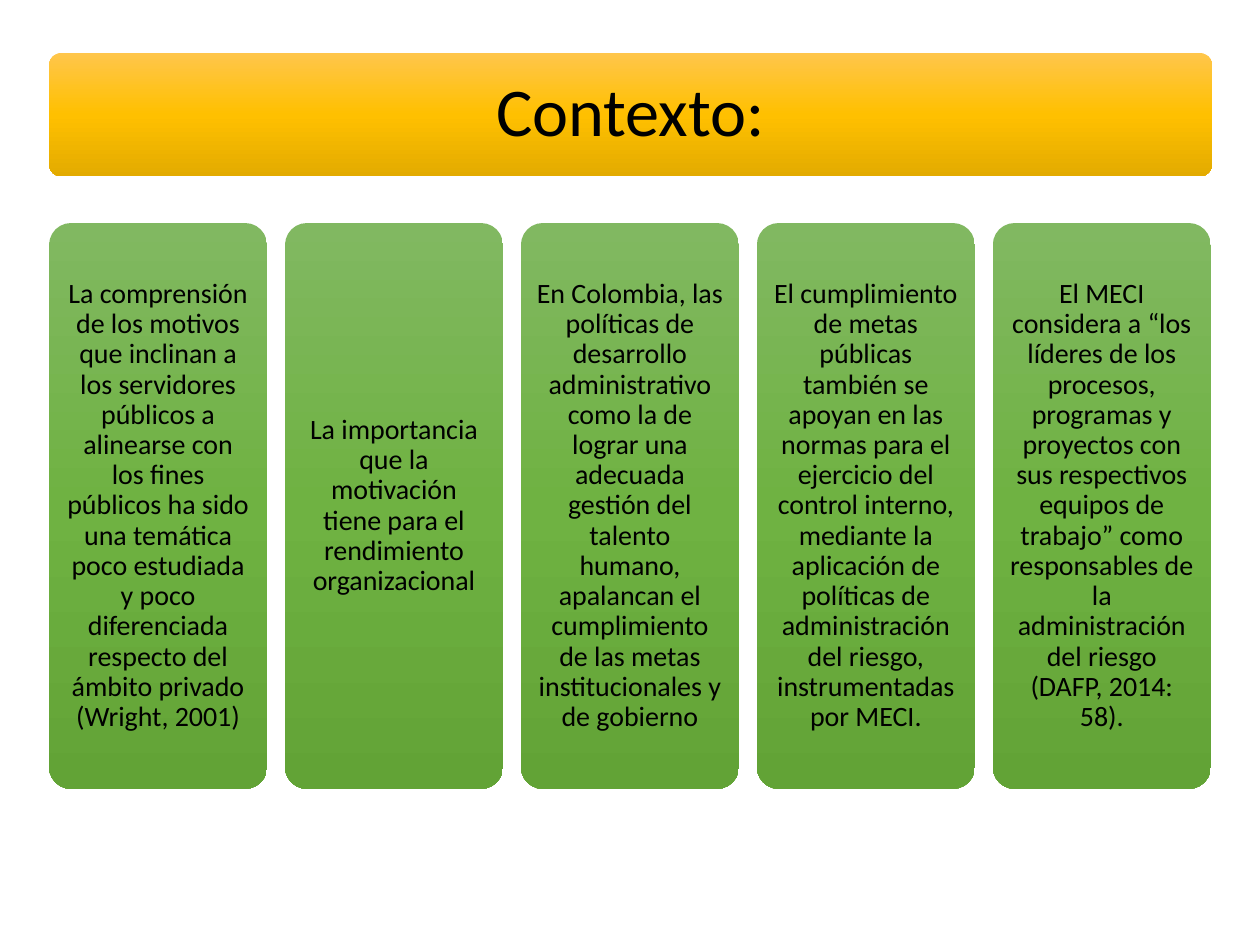
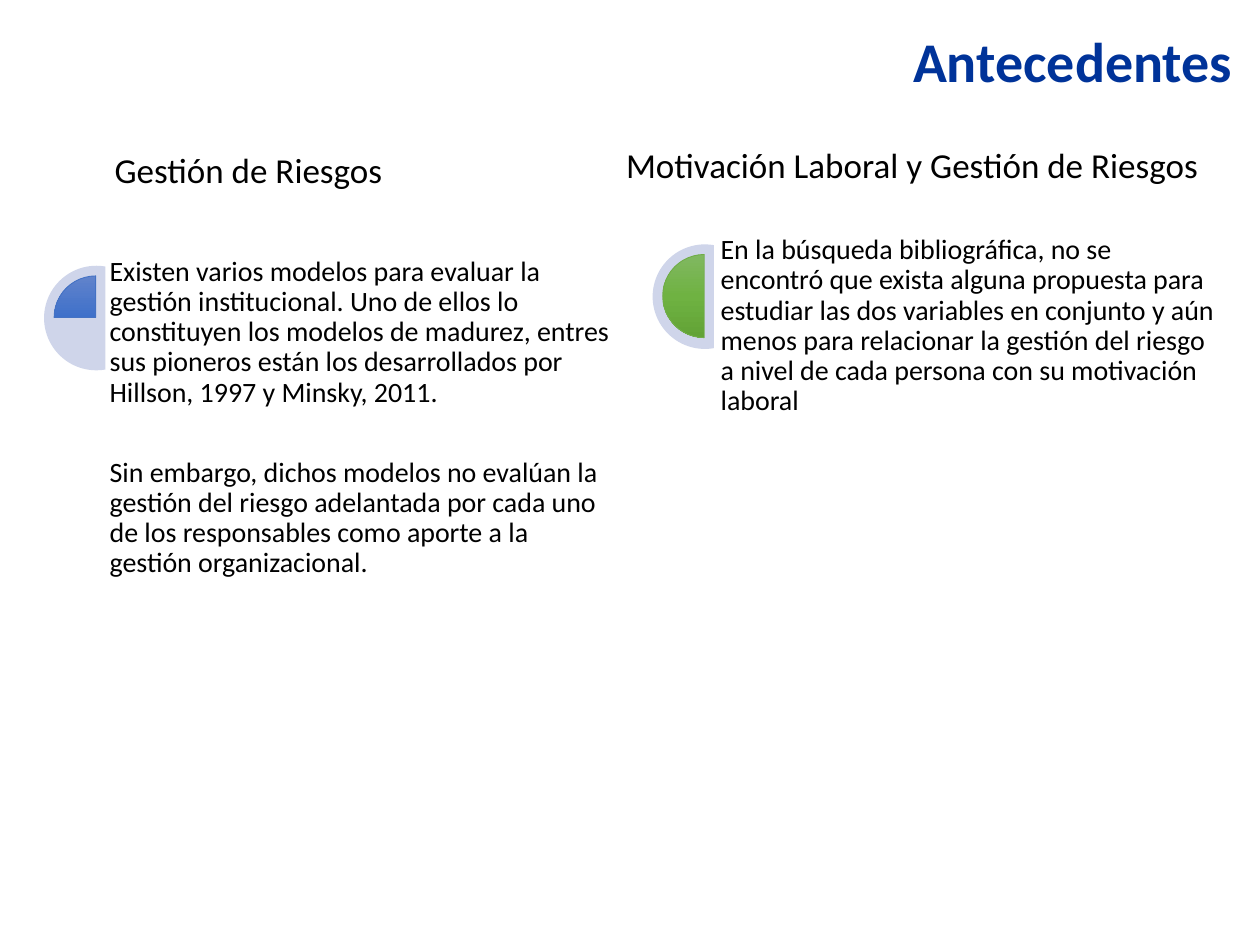
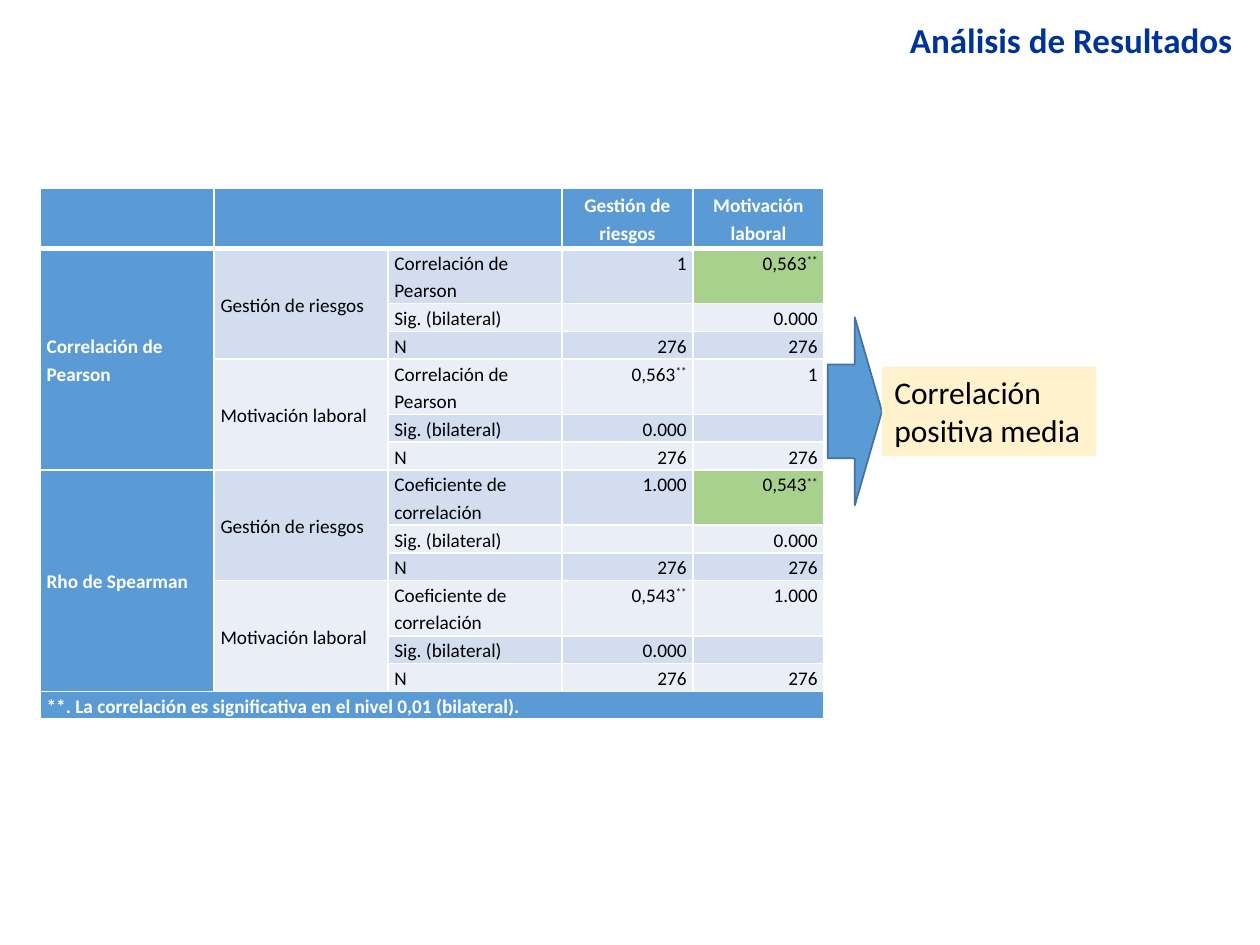
from copy import deepcopy
from lxml import etree
from pptx import Presentation, util as u
from pptx.dml.color import RGBColor
from pptx.enum import shapes, text
from pptx.oxml.ns import qn

FONT = "Calibri"
BLACK, WHITE, NAVY = "000000", "FFFFFF", "003399"
BLUE, PALE, LIGHT, MARK = "5B9BD5", "D2DEEF", "EAEFF7", "A9D18E"
GOLD = ("FFC64B", "FFC000", "E3AB00")
GREEN = ("81B861", "6FB242", "62A336")
ROYAL = ("6183CB", "3E70CA", "3062BB")
KIND = shapes.MSO_SHAPE
LEFT, MID, RIGHT = text.PP_ALIGN.LEFT, text.PP_ALIGN.CENTER, text.PP_ALIGN.RIGHT
TOP, HALF, LOW = text.MSO_ANCHOR.TOP, text.MSO_ANCHOR.MIDDLE, text.MSO_ANCHOR.BOTTOM

CARDS = [
    "La comprensión de los motivos que inclinan a los servidores públicos a alinearse con los fines públicos ha sido una temática poco estudiada y poco diferenciada respecto del ámbito privado (Wright, 2001)",
    "La importancia que la motivación tiene para el rendimiento organizacional",
    "En Colombia, las políticas de desarrollo administrativo como la de lograr una adecuada gestión del talento humano, apalancan el cumplimiento de las metas institucionales y de gobierno",
    "El cumplimiento de metas públicas también se apoyan en las normas para el ejercicio del control interno, mediante la aplicación de políticas de administración del riesgo, instrumentadas por MECI.",
    "El MECI considera a “los líderes de los procesos, programas y proyectos con sus respectivos equipos de trabajo” como responsables de la administración del riesgo (DAFP, 2014: 58).",
]

THEMES = [
    dict(head="Gestión de Riesgos", spot=(0.91, 1.02, 4.04, 0.5), align=LEFT,
         body=["Existen varios modelos para evaluar la gestión institucional. Uno de ellos lo constituyen los modelos de madurez, entres sus pioneros están los desarrollados por Hillson, 1997 y Minsky, 2011.",
               "Sin embargo, dichos modelos no evalúan la gestión del riesgo adelantada por cada uno de los responsables como aporte a la gestión organizacional."],
         area=(0.87, 2.04, 3.98, 4.05), dial=(0.35, 2.11), start=108, fill=ROYAL, edge="4472C4"),
    dict(head="Motivación Laboral y Gestión de Riesgos", spot=(4.96, 0.98, 4.55, 0.5), align=RIGHT,
         body=["En la búsqueda bibliográfica, no se encontró que exista alguna propuesta para estudiar las dos variables en conjunto y aún menos para relacionar la gestión del riesgo a nivel de cada persona con su motivación laboral"],
         area=(5.72, 1.87, 3.93, 3.89), dial=(5.18, 1.94), start=54, fill=GREEN, edge="70AD47"),
]

FACTORS = ["Gestión de riesgos", "Motivación laboral"]
TESTS = [
    ("Correlación de Pearson", "Correlación de Pearson", "1", "0,563**"),
    ("Rho de Spearman", "Coeficiente de correlación", "1.000", "0,543**"),
]
NOTE = "**. La correlación es significativa en el nivel 0,01 (bilateral)."


def tint(code):
    return RGBColor.from_string(code)


def apply(item, **vals):
    for key, val in vals.items():
        setattr(item, key, val)


def paint(part, fill):
    if isinstance(fill, str):
        part.fill.solid()
        part.fill.fore_color.rgb = tint(fill)
        return
    part.fill.gradient()
    part.fill.gradient_angle = 270
    stops = part._element.spPr.find(qn("a:gradFill")).find(qn("a:gsLst"))
    stops.insert(1, deepcopy(stops[0]))
    for stop, code, pos in zip(part.fill.gradient_stops, fill, (0, 0.5, 1)):
        stop.color.rgb = tint(code)
        stop.position = pos


def shape(slide, kind, at, fill, edge=None, width=1, adj=()):
    part = slide.shapes.add_shape(kind, *map(u.Inches, at))
    part.shadow.inherit = False
    for i, val in enumerate(adj):
        part.adjustments[i] = val
    paint(part, fill)
    if edge:
        part.line.color.rgb = tint(edge)
        part.line.width = u.Pt(width)
    else:
        part.line.fill.background()
    return part


def style(run, size, color, bold=False):
    apply(run.font, name=FONT, size=u.Pt(size), bold=bold)
    run.font.color.rgb = tint(color)


def write(part, lines, size, color=BLACK, bold=False, align=LEFT, anchor=TOP,
          inset=(0, 0), lead=1, gap=0):
    frame = part.text_frame
    side, edge = map(u.Inches, inset)
    apply(frame, word_wrap=True, vertical_anchor=anchor, margin_left=side,
          margin_right=side, margin_top=edge, margin_bottom=edge)
    for i, line in enumerate(lines):
        para = frame.add_paragraph() if i else frame.paragraphs[0]
        apply(para, alignment=align, line_spacing=lead)
        if i:
            para.space_before = u.Pt(gap)
        run = para.add_run()
        run.text = line
        style(run, size, color, bold)


def label(slide, at, lines, size, **form):
    write(slide.shapes.add_textbox(*map(u.Inches, at)), lines, size, **form)


def title(slide, line, top, high, size):
    label(slide, (0.17, top, 9.71, high), [line], size, color=NAVY, bold=True,
          align=RIGHT, inset=(0.1, 0.05))


def context(slide):
    left, wide, end = 0.39, 1.73, 9.61
    form = dict(align=MID, anchor=HALF, lead=0.9)
    band = shape(slide, KIND.ROUNDED_RECTANGLE, (left, 0.42, 9.23, 0.98), GOLD, adj=[0.1])
    write(band, ["Contexto:"], 39, inset=(0.16, 0.16), **form)
    step = (end - wide - left) / (len(CARDS) - 1)
    for i, line in enumerate(CARDS):
        card = shape(slide, KIND.ROUNDED_RECTANGLE, (left + i * step, 1.77, wide, 4.49),
                     GREEN, adj=[0.1])
        write(card, [line], 16, inset=(0.07, 0.07), **form)


def history(slide):
    title(slide, "Antecedentes", 0.16, 0.64, 32)
    for t in THEMES:
        x, y = t["dial"]
        shape(slide, KIND.CHORD, (x, y, 0.83, 0.83), "CFD5EA", adj=[48, 168])
        shape(slide, KIND.PIE, (x + 0.08, y + 0.08, 0.66, 0.66), t["fill"],
              t["edge"], 0.5, [t["start"], 162])
        label(slide, t["spot"], [t["head"]], 20, align=t["align"], anchor=LOW, lead=0.9)
        label(slide, t["area"], t["body"], 16, lead=0.9, gap=28.5)


def border(cell, base):
    props = cell._tc.get_or_add_tcPr()
    for side, width in zip("LRTB", (1, 1, 1, base)):
        line = etree.SubElement(props, qn("a:ln" + side), w=str(u.Pt(width)))
        fill = etree.SubElement(line, qn("a:solidFill"))
        etree.SubElement(fill, qn("a:srgbClr"), val=WHITE)


def fill_cell(cell, line, fill, color, bold, align, anchor, base):
    border(cell, base)
    paint(cell, fill)
    apply(cell, vertical_anchor=anchor, margin_left=u.Inches(0.05),
          margin_right=u.Inches(0.05), margin_top=0, margin_bottom=0)
    para = cell.text_frame.paragraphs[0]
    apply(para, alignment=align, line_spacing=1.15)
    main = line.removesuffix("**")
    for piece, rise in ((main, 0), (line[len(main):], 30000)):
        if piece:
            run = para.add_run()
            run.text = piece
            style(run, 11, color, bold)
            if rise:
                run.font._element.set("baseline", str(rise))
    if not line:
        etree.SubElement(para._p, qn("a:endParaRPr"), sz="1100")


def table_rows():
    rows = [["", "", ""] + FACTORS]
    for test, coef, one, value in TESTS:
        for i, name in enumerate(FACTORS):
            turn = -1 if i else 1
            rows += [["" if i else test, name, coef] + [one, value][::turn],
                     ["", "", "Sig. (bilateral)"] + ["", "0.000"][::turn],
                     ["", "", "N", "276", "276"]]
    return rows + [[NOTE, "", "", "", ""]]


def results(slide):
    title(slide, "Análisis de Resultados", 0.1, 0.44, 20)
    rows = table_rows()
    last = len(rows) - 1
    cols = [1.38] * 3 + [1.04] * 2
    highs = [0.48] + [0.44 if r % 3 == 1 else 0.22 for r in range(1, last)] + [0.22]
    grid = slide.shapes.add_table(len(rows), len(cols), *map(
        u.Inches, (0.32, 1.49, sum(cols), sum(highs)))).table
    apply(grid, first_row=False, horz_banding=False)
    for col, wide in zip(grid.columns, cols):
        col.width = u.Inches(wide)
    for row, high in zip(grid.rows, highs):
        row.height = u.Inches(high)
    for r, row in enumerate(rows):
        for c, line in enumerate(row):
            key = r in (0, last) or c == 0
            mark = c == 4 and line.endswith("**")
            fill = BLUE if key else MARK if mark else PALE if r % 2 else LIGHT
            align = LEFT if c < 3 else RIGHT if r else MID
            anchor = HALF if r < last and (r == 0 or c < 2) else TOP
            fill_cell(grid.cell(r, c), line, fill, WHITE if key else BLACK,
                      key, align, anchor, 1 if r else 3)
    spans = [(0, 1, 0, 2), (last, 0, last, 4)]
    spans += [(r, 0, r + 5, 0) for r in range(1, last, 6)]
    spans += [(r, 1, r + 2, 1) for r in range(1, last, 3)]
    for r, c, down, over in spans:
        grid.cell(r, c).merge(grid.cell(down, over))
    shape(slide, KIND.RIGHT_ARROW, (6.57, 2.52, 0.43, 1.49), BLUE, "43739E")
    box = shape(slide, KIND.RECTANGLE, (7, 2.91, 1.7, 0.71), "FFF2CC")
    write(box, ["Correlación positiva media"], 18, inset=(0.1, 0.05))


def main():
    deck = Presentation()
    apply(deck, slide_width=u.Inches(10), slide_height=u.Inches(7.5))
    for build in (context, history, results):
        build(deck.slides.add_slide(deck.slide_layouts[6]))
    deck.save("out.pptx")


if __name__ == "__main__":
    main()
